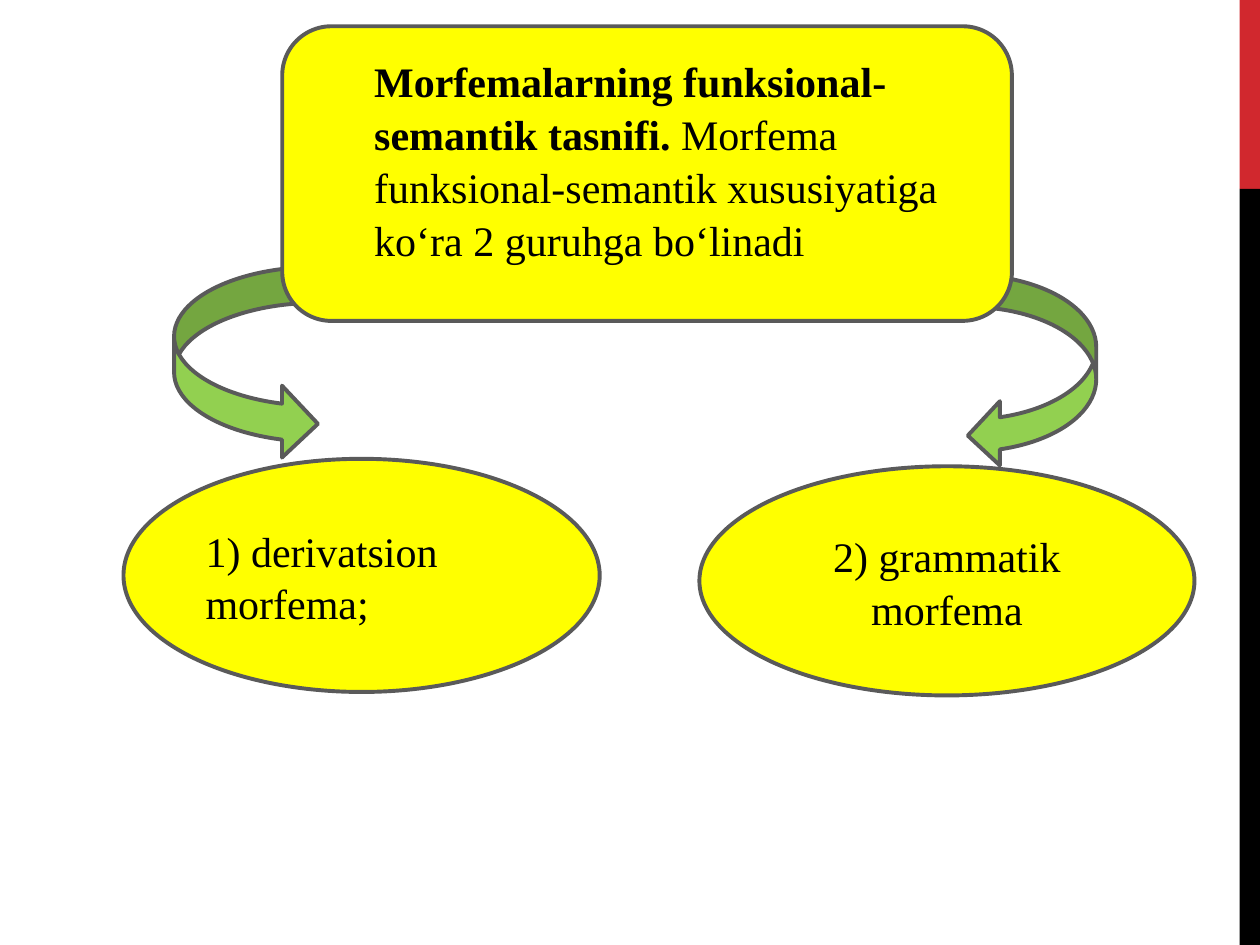
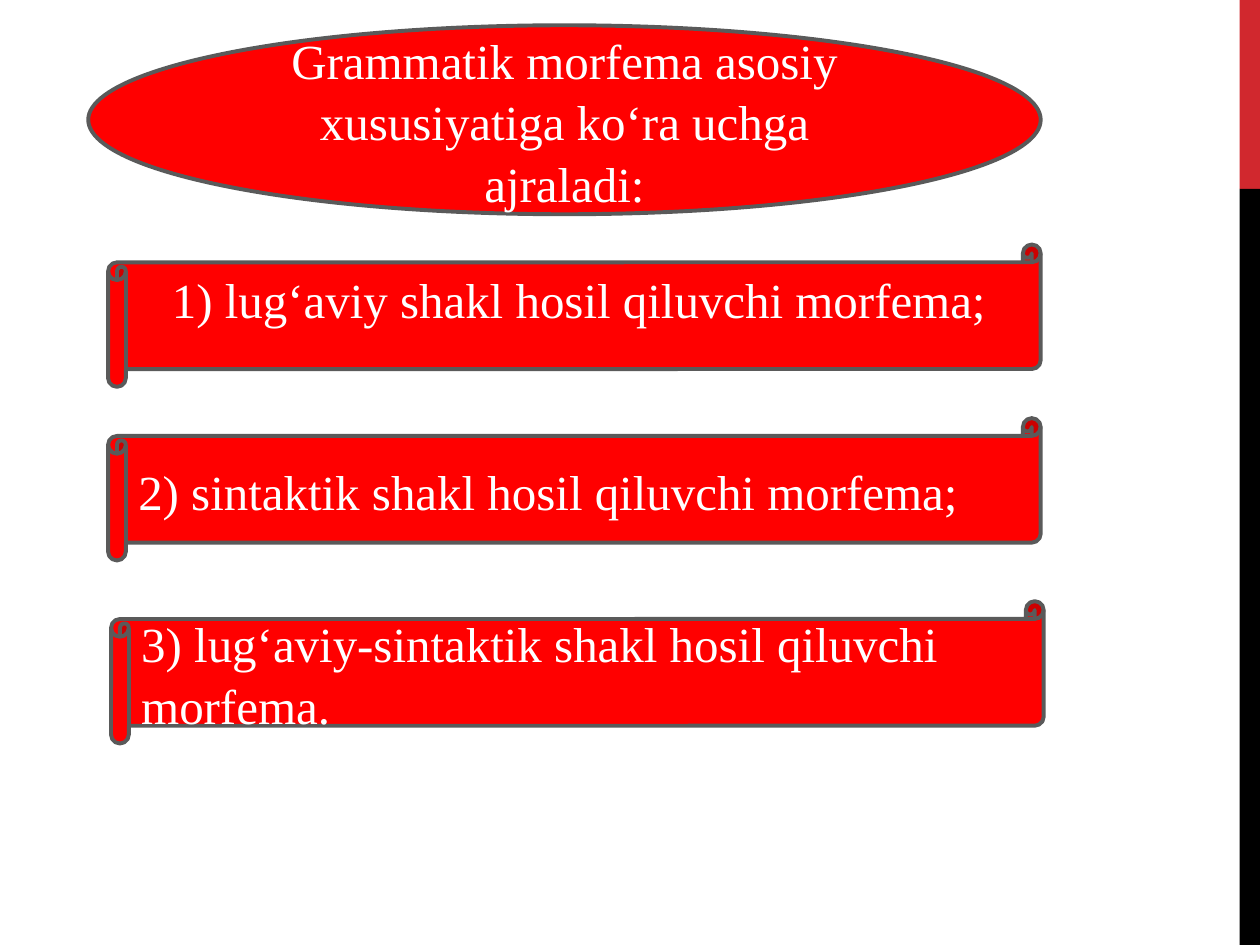
from pptx import Presentation
from pptx.dml.color import RGBColor
from pptx.enum.shapes import MSO_SHAPE as Shape
from pptx.enum.text import MSO_ANCHOR as Anchor, MSO_AUTO_SIZE as AutoSize, PP_ALIGN as Align
from pptx.util import Cm, Pt

COLORS = {
    "accent": "D1282E",
    "black": "000000",
    "white": "FFFFFF",
    "outline": "5A5A5A",
    "yellow": "FFFF00",
    "green": "92D050",
    "red": "FF0000",
}
FONT = "Times New Roman"
TITLE_ONLY = 5


def color(name):
    return RGBColor.from_string(COLORS[name])


def set_all(target, values):
    for name, value in values.items():
        setattr(target, name, value)


def write(box, spans, size, ink, align=Align.LEFT, anchor=Anchor.MIDDLE):
    """Fill a box with one paragraph of (text, bold) spans."""
    frame = box.text_frame
    set_all(frame, {"word_wrap": True, "auto_size": AutoSize.NONE,
                    "vertical_anchor": anchor})
    para = frame.paragraphs[0]
    set_all(para, {"alignment": align, "line_spacing": 1.05})
    for text, bold in spans:
        span = para.add_run()
        span.text = text
        set_all(span.font, {"name": FONT, "size": Pt(size), "bold": bold})
        span.font.color.rgb = color(ink)


def add_figure(page, kind, place, fill, outlined=True):
    figure = page.shapes.add_shape(kind, *map(Cm, place))
    figure.shadow.inherit = False
    figure.fill.solid()
    figure.fill.fore_color.rgb = color(fill)
    if outlined:
        figure.line.color.rgb = color("outline")
        figure.line.width = Pt(2.25)
    else:
        figure.line.fill.background()
    return figure


def place_title(page, place, spans, **style):
    """Set the title and bring it in front of its backing figure."""
    title = page.shapes.title
    set_all(title, dict(zip(("left", "top", "width", "height"), map(Cm, place))))
    write(title, spans, **style)
    page.shapes.element.append(title.element)


def add_master_bands(deck, page):
    """Draw the side bands and move them to the slide master."""
    tree = deck.slide_master.shapes.element
    for top, height, fill in ((0, 3.81, "accent"), (3.81, 15.24, "black")):
        band = add_figure(page, Shape.RECTANGLE, (24.99, top, 0.41, height), fill, False)
        tree.append(band.element)


def build_classes(page):
    # Two groups of morphemes
    groups = (
        ((2.49, 9.25, 9.6, 4.7), "1) derivatsion morfema;", Align.LEFT),
        ((14.1, 9.4, 9.98, 4.62), "2) grammatik morfema", Align.CENTER),
    )
    for place, text, align in groups:
        group = add_figure(page, Shape.OVAL, place, "yellow")
        write(group, [(text, False)], 24, "black", align)

    # Arrows from the heading to the groups
    add_figure(page, Shape.CURVED_LEFT_ARROW, (19.51, 5.54, 2.59, 3.89), "green")
    add_figure(page, Shape.CURVED_RIGHT_ARROW, (3.51, 5.38, 2.9, 3.89), "green")

    # Heading
    add_figure(page, Shape.ROUNDED_RECTANGLE, (5.69, 0.53, 14.71, 5.94), "yellow")
    spans = [
        ("Morfemalarning funksional-semantik tasnifi. ", True),
        ("Morfema funksional-semantik xususiyatiga ko‘ra 2 guruhga bo‘linadi", False),
    ]
    place_title(page, (7.29, 0.94, 12.14, 4.4), spans,
                size=24, ink="black", anchor=Anchor.TOP)


def build_grammatical(page):
    # Heading
    add_figure(page, Shape.OVAL, (1.78, 0.51, 19.2, 3.81), "red")
    place_title(page, (4.59, 1.07, 13.58, 2.69),
                [("Grammatik morfema asosiy xususiyatiga ko‘ra uchga ajraladi:", False)],
                size=28, ink="white", align=Align.CENTER)

    # Three kinds: left, top, text, alignment, bottom inset
    kinds = (
        (2.18, 4.93, "1) lug‘aviy shakl hosil qiluvchi morfema;", Align.CENTER, 0.86),
        (2.18, 8.43, "2) sintaktik shakl hosil qiluvchi morfema;", Align.LEFT, 0.13),
        (2.24, 12.12, "3) lug‘aviy-sintaktik shakl hosil qiluvchi morfema.", Align.LEFT, 0.13),
    )
    for left, top, text, align, inset in kinds:
        scroll = add_figure(page, Shape.HORIZONTAL_SCROLL, (left, top, 18.8, 2.87), "red")
        write(scroll, [(text, False)], 28, "white", align)
        scroll.text_frame.margin_bottom = Cm(inset)


def main():
    deck = Presentation()
    set_all(deck, {"slide_width": Cm(25.4), "slide_height": Cm(19.05)})
    layout = deck.slide_layouts[TITLE_ONLY]
    pages = [deck.slides.add_slide(layout) for _ in range(2)]
    add_master_bands(deck, pages[0])
    build_classes(pages[0])
    build_grammatical(pages[1])
    deck.save("out.pptx")


if __name__ == "__main__":
    main()
